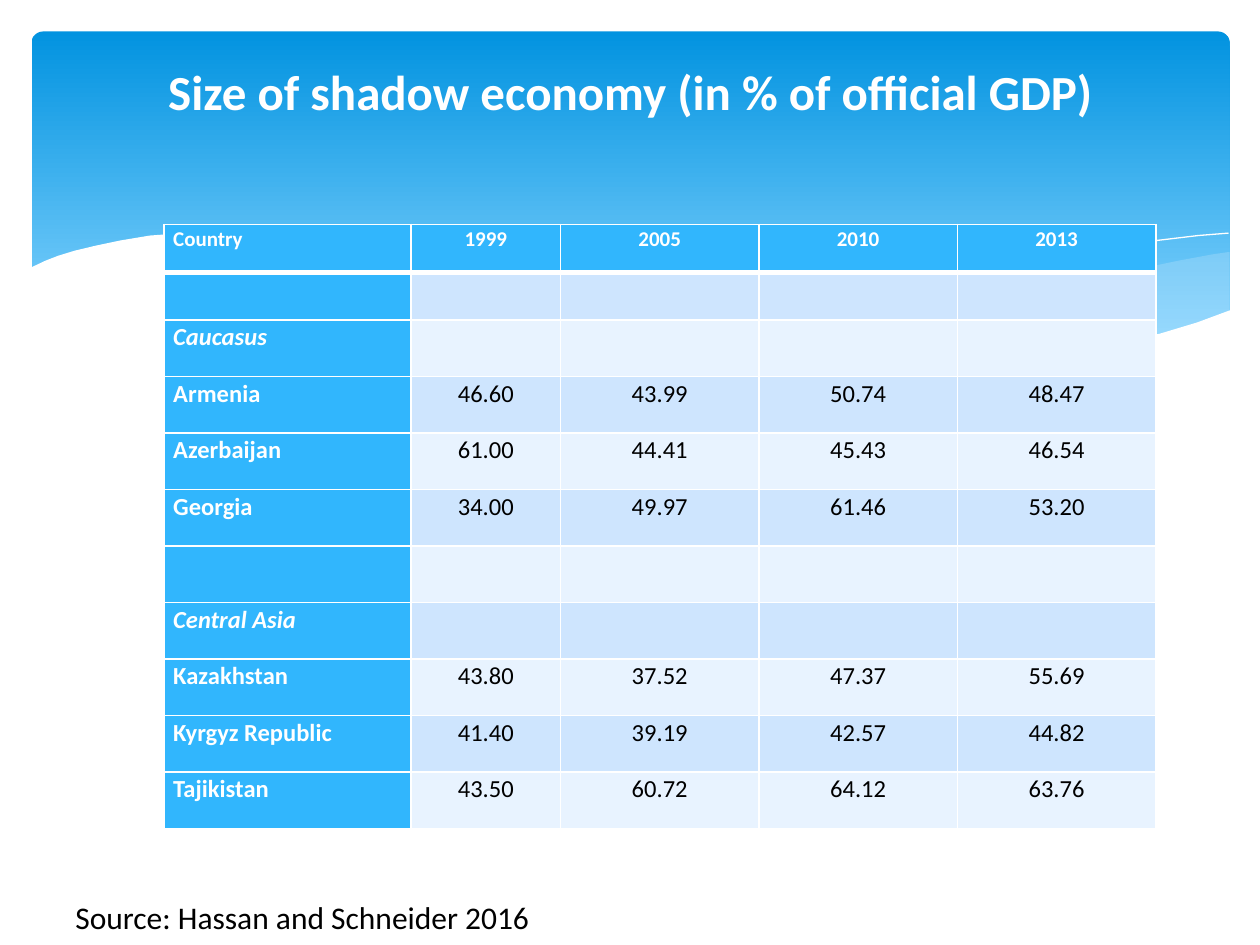
from pptx import Presentation
from pptx.dml.color import RGBColor
from pptx.enum import shapes, text as t
from pptx.oxml import ns, xmlchemy as x
from pptx.util import Pt

WHITE = RGBColor(0xFF, 0xFF, 0xFF)
BLACK = RGBColor(0, 0, 0)
DEEP = RGBColor(0x02, 0x93, 0xE0)
SKY = RGBColor(0x83, 0xD3, 0xFE)
MIST = RGBColor(0xC6, 0xE7, 0xFC)
HEAD = RGBColor(0x31, 0xB6, 0xFD)
BANDS = (RGBColor(0xCE, 0xE5, 0xFE), RGBColor(0xE8, 0xF3, 0xFF))

TITLE = "Size of shadow economy (in % of official GDP)"
SOURCE = "Source: Hassan and Schneider 2016"
REGIONS = ("Caucasus", "Central Asia")
ROWS = [
    ("Country", "1999", "2005", "2010", "2013"),
    (),
    ("Caucasus",),
    ("Armenia", "46.60", "43.99", "50.74", "48.47"),
    ("Azerbaijan", "61.00", "44.41", "45.43", "46.54"),
    ("Georgia", "34.00", "49.97", "61.46", "53.20"),
    (),
    ("Central Asia",),
    ("Kazakhstan", "43.80", "37.52", "47.37", "55.69"),
    ("Kyrgyz Republic", "41.40", "39.19", "42.57", "44.82"),
    ("Tajikistan", "43.50", "60.72", "64.12", "63.76"),
]
WIDTHS = (141.4, 85.3, 113.4, 113.4, 113.4)
HEIGHTS = [27.4] * 2 + [32.3] * 9

RIGHT = [
    (702, 144), (692.6, 145.4), (673.2, 149), (652.3, 153.4), (630.7, 158.4),
    (599, 165.6), (560.9, 174.2), (524.9, 182.2), (475.9, 190.8),
    (507.6, 195.1), (536.4, 198), (562.3, 199.4), (586.1, 200.2),
    (607.7, 199.4), (627.8, 197.3), (645.8, 194.4), (663.1, 190.8),
    (683.3, 185), (702.7, 177.8), (702.7, 144),
]
MIDDLE = [
    (643, 196.6), (602.6, 190.8), (558, 182.9), (508.3, 172.8), (452.9, 159.8),
    (420.5, 151.9), (389.5, 146.2), (361.4, 141.1), (334.8, 137.5),
    (302.4, 134.6), (273.6, 133.2), (247.7, 133.9), (225.4, 135.4),
    (205.9, 137.5), (246.2, 143.3), (290.9, 151.9), (323.3, 159.8),
    (381.6, 172.8), (432.7, 183.6), (478.8, 191.5), (519.8, 197.3),
    (556.6, 200.2), (589, 200.2), (617, 198.7), (643, 196.6),
]
LONG = [
    (222.5, 140.4), (236.2, 138.2), (261.4, 136.1), (299.5, 134.6),
    (337.7, 136.1), (367.2, 138.2), (400.3, 141.8), (437.8, 146.9),
    (478.8, 153.4), (523.4, 162.7), (572.4, 173.5), (625.7, 187.9), (653, 195.8),
]
SHORT = [
    (441.4, 185), (470.2, 177.1), (500.4, 169.2), (538.6, 160.6),
    (580.3, 151.2), (623.5, 143.3), (654.5, 138.2), (684.7, 134.6), (702, 133.2),
]
WAVE = [
    (703.4, 177.1), (684, 184.3), (662.4, 190.8), (638.6, 195.1), (612, 198),
    (582.5, 199.4), (547.9, 198), (509.8, 194.4), (466.6, 188.6), (416.9, 180),
    (362.2, 167.8), (321.8, 158.4), (281.5, 149), (244.8, 141.8), (210.2, 136.8),
    (180, 133.9), (151.9, 132.5), (127.4, 132.5), (105.1, 133.2), (85.7, 134.6),
    (68.4, 137.5), (54.7, 140.4), (42.5, 143.3), (33.1, 146.2), (25.9, 149),
    (16.6, 153.4), (16.6, 236.9), (703.4, 236.9),
]
CURVES = [
    (RIGHT, MIST, 29),
    (MIDDLE, MIST, 40),
    (LONG, None, 0),
    (SHORT, None, 0),
    (WAVE, WHITE, 100),
]


def write(frame, words, size=14, color=WHITE, bold=False, italic=False,
          align=t.PP_ALIGN.LEFT, space=1.0):
    para = frame.paragraphs[0]
    para.alignment = align
    para.line_spacing = space
    run = para.add_run()
    run.text = words
    font = run.font
    font.name = "Calibri"
    font.size = Pt(size)
    font.color.rgb = color
    font.bold = bold
    font.italic = italic


def add(parent, tag, **attrs):
    node = x.OxmlElement(tag)
    for key, val in attrs.items():
        node.set(key, str(val))
    parent.append(node)
    return node


def curve(slide, points, color, alpha):
    spots = [(Pt(a), Pt(b)) for a, b in points]
    pen = slide.shapes.build_freeform(*spots[0])
    pen.add_line_segments(spots[1:], close=color is not None)
    shape = pen.convert_to_shape()
    shape.shadow.inherit = False
    if color is None:
        shape.fill.background()
        shape.line.color.rgb = WHITE
        shape.line.width = Pt(0)
        return
    shape.fill.solid()
    shape.fill.fore_color.rgb = color
    shape.line.fill.background()
    if alpha < 100:
        tint = shape.element.find(".//" + ns.qn("a:srgbClr"))
        add(tint, "a:alpha", val=alpha * 1000)


def banner(slide):
    box = slide.shapes.add_shape(shapes.MSO_SHAPE.ROUNDED_RECTANGLE,
                                 Pt(18), Pt(18), Pt(684.7), Pt(194.4))
    box.adjustments[0] = 0.034
    box.shadow.inherit = False
    box.line.fill.background()
    box.fill.gradient()
    box.fill.gradient_angle = 270
    for stop, color, place in zip(box.fill.gradient_stops, (DEEP, SKY), (0, 0.9)):
        stop.color.rgb = color
        stop.position = place
    for item in CURVES:
        curve(slide, *item)


def edge(cell, row):
    props = cell._tc.get_or_add_tcPr()
    thick = {"T": 3 if row == 1 else 1, "B": 3 if row == 0 else 1}
    for side in "LRTB":
        line = add(props, "a:ln" + side, w=Pt(thick.get(side, 1)))
        add(add(line, "a:solidFill"), "a:srgbClr", val=WHITE)


def grid(slide):
    frame = slide.shapes.add_table(len(ROWS), len(WIDTHS), Pt(93.6), Pt(128.2),
                                   Pt(sum(WIDTHS)), Pt(sum(HEIGHTS)))
    table = frame.table
    for col, wide in zip(table.columns, WIDTHS):
        col.width = Pt(wide)
    for r, (row, high) in enumerate(zip(ROWS, HEIGHTS)):
        table.rows[r].height = Pt(high)
        for c in range(len(WIDTHS)):
            cell = table.cell(r, c)
            label = r == 0 or c == 0
            edge(cell, r)
            cell.fill.solid()
            cell.fill.fore_color.rgb = HEAD if label else BANDS[(r - 1) % 2]
            cell.margin_left = cell.margin_right = Pt(5.4)
            cell.margin_top = cell.margin_bottom = 0
            if c < len(row):
                write(cell.text_frame, row[c], size=12 if r == 0 else 14,
                      color=WHITE if label else BLACK, bold=label,
                      italic=row[c] in REGIONS, space=1.07,
                      align=t.PP_ALIGN.CENTER if c else t.PP_ALIGN.LEFT)


def main():
    deck = Presentation()
    deck.slide_width, deck.slide_height = Pt(720), Pt(540)
    slide = deck.slides.add_slide(deck.slide_layouts[5])
    banner(slide)

    title = slide.shapes.title
    title.element.getparent().append(title.element)
    title.left, title.top, title.width, title.height = Pt(36), Pt(26.6), Pt(648), Pt(50.4)
    title.text_frame.vertical_anchor = t.MSO_ANCHOR.MIDDLE
    write(title.text_frame, TITLE, size=28, bold=True, align=t.PP_ALIGN.CENTER)

    grid(slide)
    note = slide.shapes.add_textbox(Pt(36), Pt(509.8), Pt(306.7), Pt(29))
    note.text_frame.word_wrap = True
    write(note.text_frame, SOURCE, size=18, color=BLACK)
    deck.save("out.pptx")


if __name__ == "__main__":
    main()
